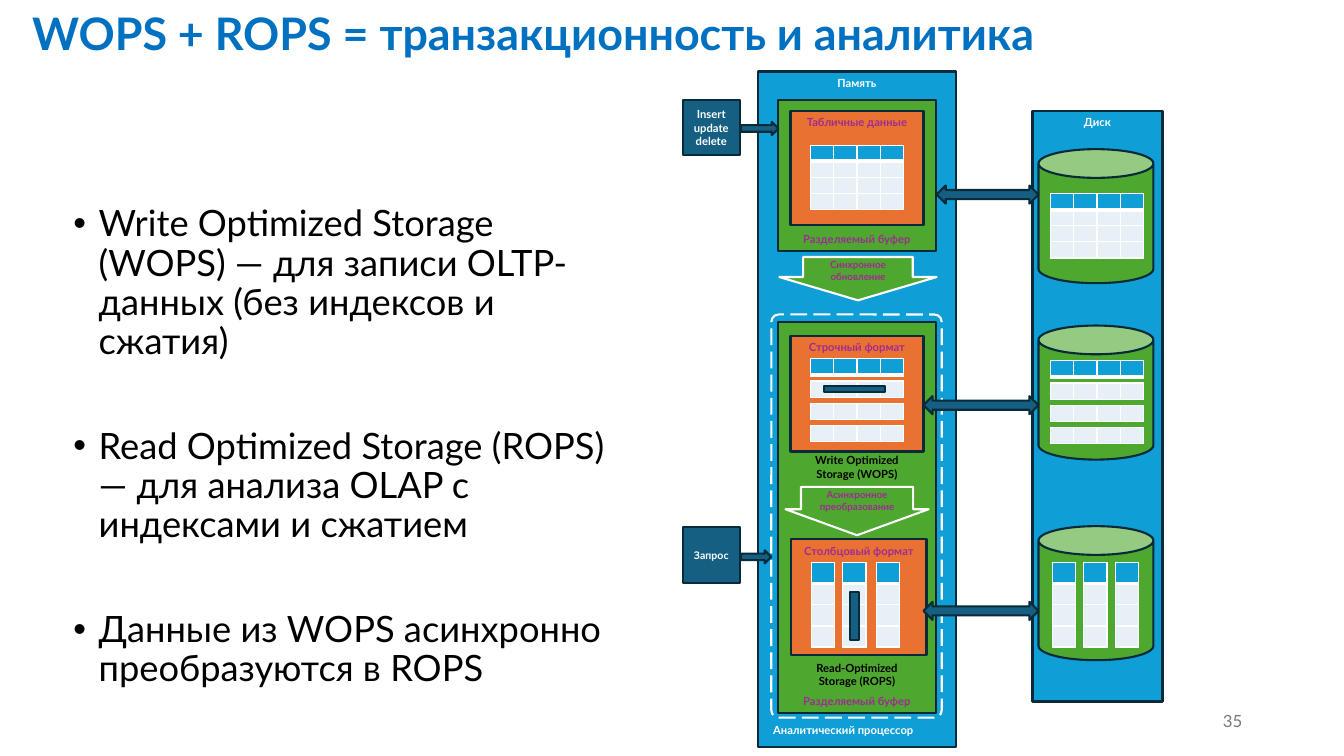
from lxml import etree
from pptx import Presentation
from pptx.dml.color import RGBColor
from pptx.enum.dml import MSO_LINE
from pptx.enum.shapes import MSO_SHAPE
from pptx.enum.text import MSO_ANCHOR, PP_ALIGN
from pptx.oxml.ns import qn
from pptx.util import Inches, Pt

rgb = RGBColor.from_string
BLUE, TEAL, DARK = "0F9ED5", "156082", "092A39"
GREEN, ORANGE, PURPLE = "4EA72E", "E97132", "A02B93"
WHITE, BLACK, PALE = "FFFFFF", "000000", "E7F0F7"
RECT = MSO_SHAPE.RECTANGLE
TOP, MIDDLE, BOTTOM = MSO_ANCHOR.TOP, MSO_ANCHOR.MIDDLE, MSO_ANCHOR.BOTTOM

prs = Presentation()
prs.slide_width, prs.slide_height = Inches(13.33), Inches(7.5)
s = prs.slides.add_slide(prs.slide_layouts[6])


def add_box(kind, x, y, w, h, fill=None, line=DARK, text="", size=8, color=WHITE,
            anchor=TOP, align=PP_ALIGN.CENTER, bold=True):
    """Add a preset shape, or a text box when kind is None."""
    place = [Inches(v) for v in (x, y, w, h)]
    if kind is None:
        sp = s.shapes.add_textbox(*place)
    else:
        sp = s.shapes.add_shape(kind, *place)
        sp.shadow.inherit = False
        sp.line.color.rgb = rgb(line)
        sp.line.width = Pt(1.5)
        if fill:
            sp.fill.solid()
            sp.fill.fore_color.rgb = rgb(fill)
        else:
            sp.fill.background()
    tf = sp.text_frame
    tf.word_wrap = True
    tf.vertical_anchor = anchor
    if text:
        tf.text = text
    for p in tf.paragraphs:
        p.alignment = align
        for r in p.runs:
            r.font.name, r.font.size, r.font.bold = "Lato", Pt(size), bold
            r.font.color.rgb = rgb(color)
    return sp


def add_grid(x, y, rows, cols, cell_w=0.23, cell_h=0.16, header=True):
    """Add an empty table with white borders and an optional blue header row."""
    frame = s.shapes.add_table(rows, cols, Inches(x), Inches(y),
                               Inches(cols * cell_w), Inches(rows * cell_h))
    tbl = frame.table
    tbl.first_row = tbl.horz_banding = False
    for col in tbl.columns:
        col.width = Inches(cell_w)
    for i, row in enumerate(tbl.rows):
        row.height = Inches(cell_h)
        is_header = header and i == 0
        for cell in row.cells:
            cell.margin_left = cell.margin_right = cell.margin_top = cell.margin_bottom = 0
            end = etree.SubElement(cell.text_frame.paragraphs[0]._p, qn("a:endParaRPr"))
            end.set("sz", "400")
            tc_pr = cell._tc.get_or_add_tcPr()
            for side in ("lnL", "lnR", "lnT", "lnB"):
                width = 3 if is_header and side == "lnB" else 1
                ln = etree.SubElement(tc_pr, qn(f"a:{side}"), w=str(Pt(width)))
                fill = etree.SubElement(ln, qn("a:solidFill"))
                etree.SubElement(fill, qn("a:srgbClr"), val=WHITE)
            cell.fill.solid()
            cell.fill.fore_color.rgb = rgb(BLUE if is_header else PALE)


# Title and slide number
title = add_box(None, 0.22, 0.14, 11.41, 0.43, text="WOPS + ROPS = транзакционность и аналитика",
                size=32, color="0070C0", anchor=MIDDLE, align=PP_ALIGN.LEFT)
title.text_frame.paragraphs[0].line_spacing = 0.9
add_box(None, 9.42, 6.95, 3, 0.4, text="35", size=12, color="797979",
        anchor=MIDDLE, align=PP_ALIGN.RIGHT, bold=False)

# Bulleted points
points = [
    "Write Optimized Storage (WOPS) — для записи OLTP-данных (без индексов и сжатия)",
    "Read Optimized Storage (ROPS) — для анализа OLAP с индексами и сжатием",
    "Данные из WOPS асинхронно преобразуются в ROPS",
]
body = add_box(None, 0.63, 1.99, 5.71, 4.76, text="\n".join(points), size=25.9,
               color=BLACK, align=PP_ALIGN.LEFT, bold=False)
for i, p in enumerate(body.text_frame.paragraphs):
    p.line_spacing = 0.9
    p.space_before = Pt(47 if i else 0)
    p_pr = p._p.get_or_add_pPr()
    p_pr.set("marL", str(Inches(0.25)))
    p_pr.set("indent", str(-Inches(0.25)))
    etree.SubElement(p_pr, qn("a:buFont"), typeface="Arial")
    etree.SubElement(p_pr, qn("a:buChar"), char="•")

# Inputs
add_box(RECT, 6.77, 0.99, 0.57, 0.55, TEAL, text="Insert\nupdate\ndelete", anchor=MIDDLE)
add_box(RECT, 6.77, 5.23, 0.57, 0.55, TEAL, text="Запрос", size=7.5, anchor=MIDDLE)

# Memory with its two shared buffers
add_box(RECT, 7.52, 0.71, 1.96, 6.7, BLUE, text="Память")
for y, h in [(0.99, 1.5), (3.19, 3.88)]:
    add_box(RECT, 7.72, y, 1.56, h, GREEN, text="Разделяемый буфер", color=PURPLE, anchor=BOTTOM)
add_box(None, 7.52, 7.13, 1.69, 0.24, text="Аналитический процессор")
processor = add_box(MSO_SHAPE.ROUNDED_RECTANGLE, 7.65, 3.12, 1.69, 4, line=WHITE)
processor.adjustments[0] = 0.044
processor.line.dash_style = MSO_LINE.LONG_DASH

# Data formats held in memory
for x, y, w, h, name in [
    (7.84, 1.1, 1.32, 1.13, "Табличные данные"),
    (7.84, 3.33, 1.32, 1.15, "Строчный формат"),
    (7.85, 5.35, 1.34, 1.15, "Столбцовый формат"),
]:
    add_box(RECT, x, y, w, h, ORANGE, text=name, color=PURPLE)
for y, name in [(4.45, "Write Optimized Storage (WOPS)"), (6.51, "Read-Optimized Storage (ROPS)")]:
    add_box(None, 7.81, y, 1.38, 0.37, text=name, color=BLACK)

# Update and conversion arrows
for x, y, w, h, stem, name in [
    (7.73, 2.55, 1.56, 0.43, 0.697, "Синхронное обновление"),
    (7.79, 4.83, 1.42, 0.48, 0.783, "Асинхронное преобразование"),
]:
    arrow = add_box(MSO_SHAPE.DOWN_ARROW, x, y, w, h, GREEN, WHITE, name, 7, PURPLE, MIDDLE)
    arrow.adjustments[0] = stem
    arrow.adjustments[1] = 0.537

# Disk with its cylinders
add_box(RECT, 10.24, 1.1, 1.29, 5.86, BLUE, text="Диск")
for y in (1.48, 3.23, 5.22):
    add_box(MSO_SHAPE.CAN, 10.3, y, 1.14, 1.33, GREEN)

# Whole tables, separate rows and separate columns, in memory and on disk
for x, table_y, rows_y, columns_x in [
    (8.04, 1.44, 3.56, (8.05, 8.36, 8.69)),
    (10.42, 1.92, 3.58, (10.44, 10.75, 11.06)),
]:
    add_grid(x, table_y, 4, 4)
    for i in range(4):
        add_grid(x, rows_y + 0.22 * i, 1, 4, header=i == 0)
    for column_x in columns_x:
        add_grid(column_x, 5.58, 4, 1, cell_h=0.21)

# Highlighted row and column
add_box(RECT, 8.17, 3.83, 0.61, 0.06, TEAL)
add_box(RECT, 8.43, 5.87, 0.09, 0.48, TEAL)

# Arrows into memory and between memory and disk
for y, w in [(1.21, 0.37), (5.46, 0.3)]:
    add_box(MSO_SHAPE.RIGHT_ARROW, 7.35, y, w, 0.13, TEAL)
for x, y in [(9.29, 1.84), (9.16, 3.93), (9.16, 5.97)]:
    add_box(MSO_SHAPE.LEFT_RIGHT_ARROW, x, y, 10.3 - x, 0.18, TEAL)

prs.save("out.pptx")
